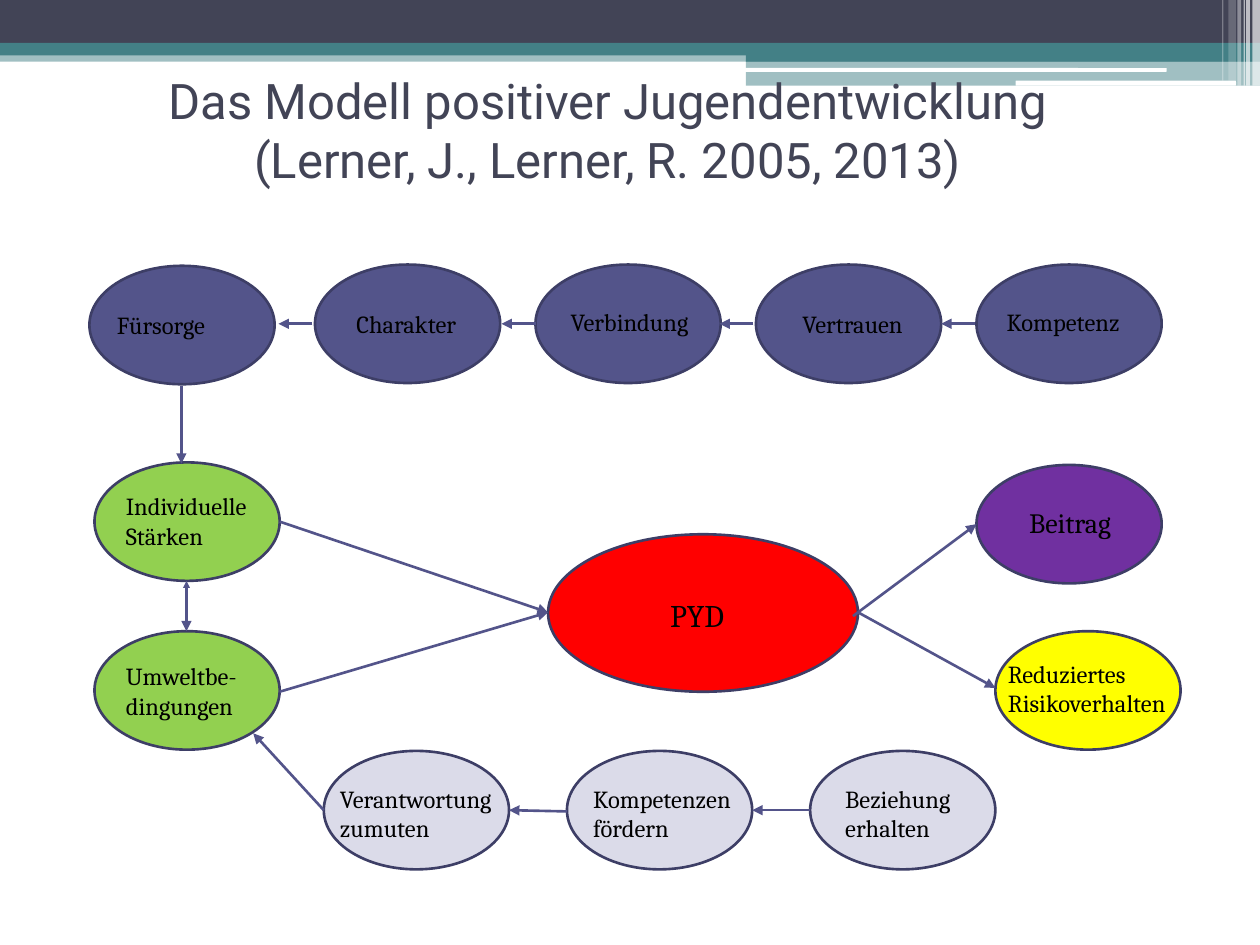
from pptx import Presentation
from pptx.dml.color import RGBColor
from pptx.enum.shapes import MSO_CONNECTOR, MSO_SHAPE
from pptx.enum.text import MSO_ANCHOR, PP_ALIGN
from pptx.oxml.ns import qn
from pptx.util import Inches, Pt
from lxml.etree import SubElement

COLORS = {
    "navy": "424456", "teal": "438086", "white": "FFFFFF", "black": "000000",
    "outline": "3D3E66", "indigo": "53548A", "green": "92D050", "red": "FF0000",
    "purple": "7030A0", "yellow": "FFFF00", "lavender": "DBDBE9",
}


def write_text(frame, text, font="Cambria", size=14, color="black",
               align=PP_ALIGN.LEFT, anchor=MSO_ANCHOR.TOP):
    frame.word_wrap = True
    frame.vertical_anchor = anchor
    frame.text = text
    paragraph = frame.paragraphs[0]
    paragraph.alignment = align
    for run in paragraph.runs:
        run.font.name = font
        run.font.size = Pt(size)
        run.font.color.rgb = RGBColor.from_string(COLORS[color])


def add_filled(kind, box, color, opacity=100):
    shape = slide.shapes.add_shape(kind, *map(Inches, box))
    shape.shadow.inherit = False
    shape.fill.solid()
    shape.fill.fore_color.rgb = RGBColor.from_string(COLORS[color])
    shape.line.fill.background()
    if opacity < 100:
        tint = shape.fill._xPr.find(qn("a:solidFill"))[0]
        SubElement(tint, qn("a:alpha"), val=str(opacity * 1000))
    return shape


presentation = Presentation()
presentation.slide_width = Inches(10)
presentation.slide_height = Inches(7.5)
slide = presentation.slides.add_slide(presentation.slide_layouts[5])

bands = [
    (MSO_SHAPE.RECTANGLE, (0, 0.4, 10, 0.09), "teal", 50),
    (MSO_SHAPE.RECTANGLE, (0, 0, 10, 0.34), "navy", 100),
    (MSO_SHAPE.RECTANGLE, (0, 0.34, 10, 0.1), "teal", 100),
    (MSO_SHAPE.RECTANGLE, (5.92, 0.39, 4.08, 0.1), "teal", 100),
    (MSO_SHAPE.RECTANGLE, (5.92, 0.48, 4.08, 0.2), "teal", 50),
    (MSO_SHAPE.ROUNDED_RECTANGLE, (5.91, 0.54, 3.35, 0.03), "white", 100),
    (MSO_SHAPE.ROUNDED_RECTANGLE, (8.06, 0.64, 1.75, 0.04), "white", 100),
]
for band in bands:
    add_filled(*band)

stripes = [
    (9.94, 0.06, 0.68, 65), (9.89, 0.03, 0.68, 65), (9.87, 0.01, 0.68, 60),
    (9.82, 0.03, 0.68, 40), (9.75, 0.06, 0.64, 20), (9.7, 0.01, 0.64, 30),
]
for left, width, height, opacity in stripes:
    add_filled(MSO_SHAPE.RECTANGLE, (left, 0, width, height), "white", opacity)

title = slide.shapes.title
title.left, title.top, title.width, title.height = map(Inches, (0.37, 0.44, 9, 1.17))
title.element.getparent().append(title.element)
write_text(title.text_frame,
           "Das Modell positiver Jugendentwicklung \v(Lerner, J., Lerner, R. 2005, 2013) ",
           font="Roboto", size=28, color="navy",
           align=PP_ALIGN.CENTER, anchor=MSO_ANCHOR.MIDDLE)

NODE = (1.47, 0.94)
nodes = [
    ("Individuelle Stärken", (0.75, 3.67), NODE, "green", (0.9, 3.85, 1.25, 0.57), 14),
    ("Umweltbe-dingungen", (0.75, 5.01), NODE, "green", (0.9, 5.2, 1.22, 0.57), 14),
    ("PYD", (4.35, 4.24), (2.46, 1.25), "red", (5.22, 4.68, 0.73, 0.4), 18),
    ("Beitrag", (7.75, 3.69), NODE, "purple", (8.07, 3.96, 1.06, 0.37), 16),
    ("Reduziertes Risikoverhalten", (7.9, 5.01), NODE, "yellow", (7.9, 5.18, 1.65, 0.57), 14),
    ("Fürsorge", (0.71, 2.11), NODE, "indigo", (0.83, 2.41, 1.25, 0.34), 14),
]
strengths = [
    ("Charakter", 2.73, 2.4, 1.2), ("Verbindung", 4.43, 2.39, 1.28),
    ("Vertrauen", 6.27, 2.4, 1.09), ("Kompetenz", 7.89, 2.39, 1.36),
]
for column, (text, left, top, width) in enumerate(strengths):
    nodes.append((text, (2.5 + 1.75 * column, 2.1), NODE, "indigo",
                  (left, top, width, 0.34), 14))
supports = [
    ("Verantwortung zumuten", 2.6, 1.53), ("Kompetenzen fördern", 4.61, 1.54),
    ("Beziehung erhalten", 6.61, 1.62),
]
for column, (text, left, width) in enumerate(supports):
    nodes.append((text, (2.57 + 1.93 * column, 5.96), NODE, "lavender",
                  (left, 6.17, width, 0.57), 14))

for text, corner, extent, color, label_box, size in nodes:
    oval = add_filled(MSO_SHAPE.OVAL, corner + extent, color)
    oval.line.color.rgb = RGBColor.from_string(COLORS["outline"])
    oval.line.width = Pt(1.5)
    label = slide.shapes.add_textbox(*map(Inches, label_box))
    write_text(label.text_frame, text, size=size)

arrows = [
    (6.77, 4.89, 7.75, 4.16), (6.81, 4.86, 7.9, 5.46),
    (1.48, 4.61, 1.48, 5.01), (2.22, 4.14, 4.35, 4.86), (2.22, 5.49, 4.35, 4.86),
    (4.5, 6.44, 4.04, 6.43), (6.43, 6.43, 5.97, 6.43), (2.57, 6.43, 2.01, 5.82),
    (1.44, 3.06, 1.44, 3.68),
]
arrows += [(start, 2.57, start - 0.27, 2.57) for start in (2.48, 4.25, 5.98, 7.74)]
two_way = (1.48, 4.61, 1.48, 5.01)
for ends in arrows:
    arrow = slide.shapes.add_connector(MSO_CONNECTOR.STRAIGHT, *map(Inches, ends))
    arrow.line.color.rgb = RGBColor.from_string(COLORS["indigo"])
    arrow.line.width = Pt(1.5)
    stroke = arrow.line._get_or_add_ln()
    if ends == two_way:
        SubElement(stroke, qn("a:headEnd"), type="triangle", w="sm", len="sm")
    SubElement(stroke, qn("a:tailEnd"), type="triangle")
    SubElement(arrow.element.spPr, qn("a:effectLst"))

presentation.save("out.pptx")
